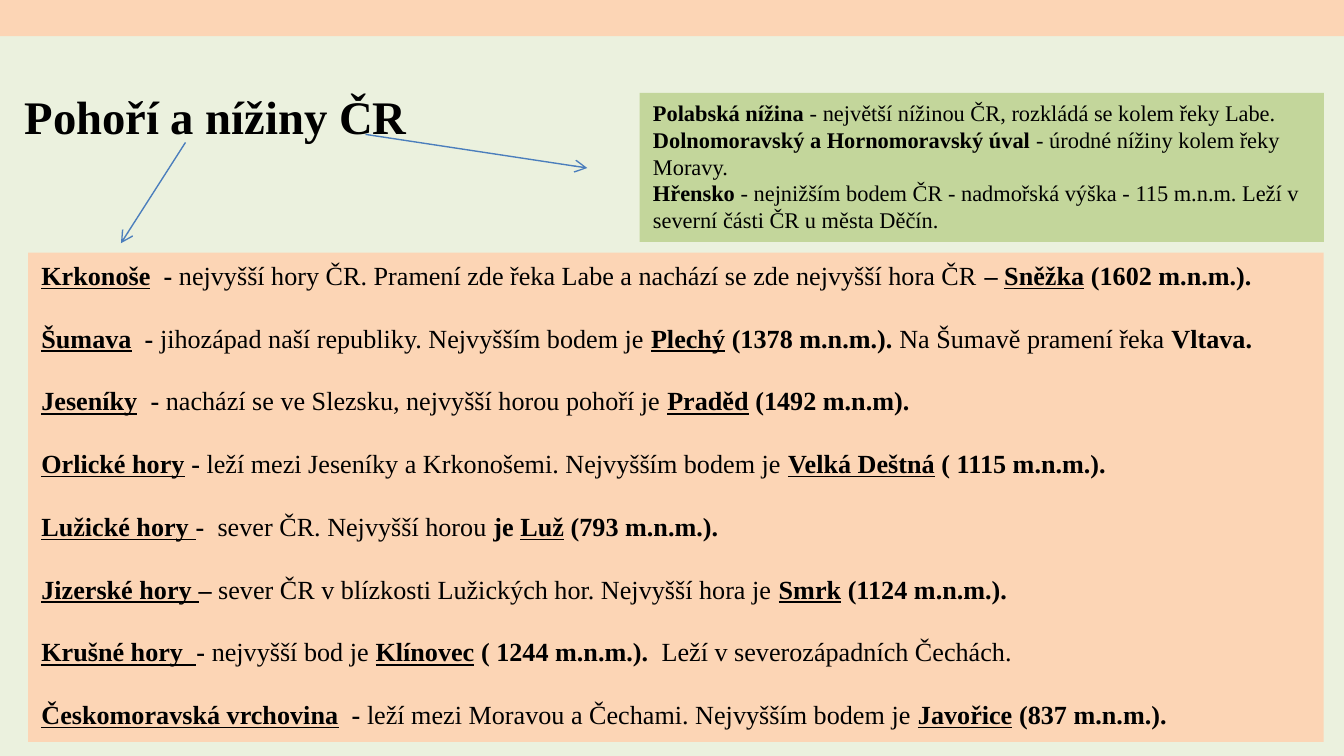
from lxml import etree
from pptx import Presentation
from pptx import util as u
from pptx.dml.color import RGBColor
from pptx.enum import shapes, text
from pptx.oxml import ns

BACKGROUND = RGBColor(0xEB, 0xF1, 0xDE)
PEACH = RGBColor(0xFC, 0xD5, 0xB5)
GREEN = RGBColor(0xC3, 0xD6, 0x9B)
BLUE = RGBColor(0x4B, 0x7E, 0xBC)
BLACK = RGBColor(0, 0, 0)
FONT = "Times New Roman"

PLAIN = {"bold": False, "underline": False}
BOLD = {"bold": True, "underline": False}
UNDER = {"bold": True, "underline": True}

MOUNTAINS = [
    [("Krkonoše", UNDER), ("  - ", BOLD),
     ("nejvyšší hory ČR. Pramení zde řeka Labe a nachází se zde nejvyšší hora ČR ", PLAIN),
     ("– ", BOLD), ("Sněžka", UNDER), (" (1602 m.n.m.).", BOLD)],
    [("Šumava", UNDER), ("  - ", BOLD),
     ("jihozápad naší republiky. Nejvyšším bodem je ", PLAIN),
     ("Plechý", UNDER), (" (1378 m.n.m.). ", BOLD),
     ("Na Šumavě pramení řeka ", PLAIN), ("Vltava.", BOLD)],
    [("Jeseníky", UNDER), ("  - ", BOLD),
     ("nachází se ve Slezsku, nejvyšší horou pohoří je ", PLAIN),
     ("Praděd", UNDER), (" (1492 m.n.m).", BOLD)],
    [("Orlické hory", UNDER), (" - ", BOLD),
     ("leží mezi Jeseníky a Krkonošemi. Nejvyšším bodem je ", PLAIN),
     ("Velká Deštná", UNDER), (" ( 1115 m.n.m.).", BOLD)],
    [("Lužické hory ", UNDER), ("-  ", BOLD), ("sever ČR. Nejvyšší horou ", PLAIN),
     ("je ", BOLD), ("Luž", UNDER), (" (793 m.n.m.).", BOLD)],
    [("Jizerské hory ", UNDER), ("– ", BOLD),
     ("sever ČR v blízkosti Lužických hor. Nejvyšší hora je ", PLAIN),
     ("Smrk", UNDER), (" (1124 m.n.m.).", BOLD)],
    [("Krušné hory  ", UNDER), ("- ", BOLD), ("nejvyšší bod je ", PLAIN),
     ("Klínovec", UNDER), (" ( 1244 m.n.m.).  ", BOLD),
     ("Leží v severozápadních Čechách.", PLAIN)],
    [("Českomoravská vrchovina", UNDER), ("  - ", BOLD),
     ("leží mezi Moravou a Čechami. Nejvyšším bodem je ", PLAIN),
     ("Javořice", UNDER), (" (837 m.n.m.).", BOLD)],
]

LOWLANDS = [
    [("Polabská nížina", BOLD),
     (" - největší nížinou ČR, rozkládá se kolem řeky Labe.", PLAIN)],
    [("Dolnomoravský a Hornomoravský úval", BOLD),
     (" - úrodné nížiny kolem řeky Moravy.", PLAIN)],
    [("Hřensko", BOLD),
     (" - nejnižším bodem ČR - nadmořská výška - 115 m.n.m. "
      "Leží v severní části ČR u města Děčín.", PLAIN)],
]


def apply(target, values):
    """Set each named attribute on the target."""
    for name, value in values.items():
        setattr(target, name, value)


def write(sp, paragraphs, size, spacing, anchor=text.MSO_ANCHOR.TOP):
    """Fill a shape with left-aligned paragraphs of styled runs."""
    tf = sp.text_frame
    apply(tf, {"word_wrap": True, "vertical_anchor": anchor})
    for i, runs in enumerate(paragraphs):
        p = tf.add_paragraph() if i else tf.paragraphs[0]
        apply(p, {"alignment": text.PP_ALIGN.LEFT, **spacing})
        for words, style in runs:
            r = p.add_run()
            r.text = words
            apply(r.font, {"name": FONT, "size": u.Pt(size), **style})
            r.font.color.rgb = BLACK


def add_title(s, box):
    """Place the slide heading."""
    sp = s.shapes.add_textbox(*map(u.Inches, box))
    write(sp, [[(" Pohoří a nížiny ČR", BOLD)]], 25, {}, text.MSO_ANCHOR.MIDDLE)


def add_panel(s, box, color):
    """Place a plain filled rectangle and return it."""
    sp = s.shapes.add_shape(shapes.MSO_SHAPE.RECTANGLE, *map(u.Inches, box))
    sp.shadow.inherit = False
    sp.fill.solid()
    sp.fill.fore_color.rgb = color
    sp.line.fill.background()
    return sp


def add_mountains(s, box):
    """Place the panel of mountain ranges."""
    spacing = {"line_spacing": u.Pt(16.8), "space_after": u.Pt(16.8)}
    write(add_panel(s, box, PEACH), MOUNTAINS, 14, spacing)


def add_lowlands(s, box):
    """Place the panel of lowlands."""
    write(add_panel(s, box, GREEN), LOWLANDS, 12, {"line_spacing": u.Pt(14.35)})


def add_arrow(s, start, end):
    """Draw a thin arrow from start to end."""
    cx = s.shapes.add_connector(shapes.MSO_CONNECTOR.STRAIGHT,
                                *map(u.Inches, start + end))
    cx.line.color.rgb = BLUE
    cx.line.width = u.Pt(0.75)
    ln = cx._element.spPr.find(ns.qn("a:ln"))
    etree.SubElement(ln, ns.qn("a:tailEnd"), type="arrow")
    etree.SubElement(cx._element.spPr, ns.qn("a:effectLst"))


def main():
    """Build and save the slide."""
    prs = Presentation()
    width = u.Inches(10)
    apply(prs, {"slide_width": width, "slide_height": width * 9 // 16})
    s = prs.slides.add_slide(prs.slide_layouts[6])
    s.background.fill.solid()
    s.background.fill.fore_color.rgb = BACKGROUND
    add_title(s, (0, 0.54, 4.06, 0.65))
    add_panel(s, (0, 0, 10, 0.27), PEACH)
    add_mountains(s, (0.21, 1.88, 9.64, 3.64))
    add_lowlands(s, (4.76, 0.69, 5.09, 1.11))
    add_arrow(s, (1.38, 1.06), (0.9, 1.81))
    add_arrow(s, (2.72, 1), (4.37, 1.25))
    prs.save("out.pptx")


if __name__ == "__main__":
    main()
